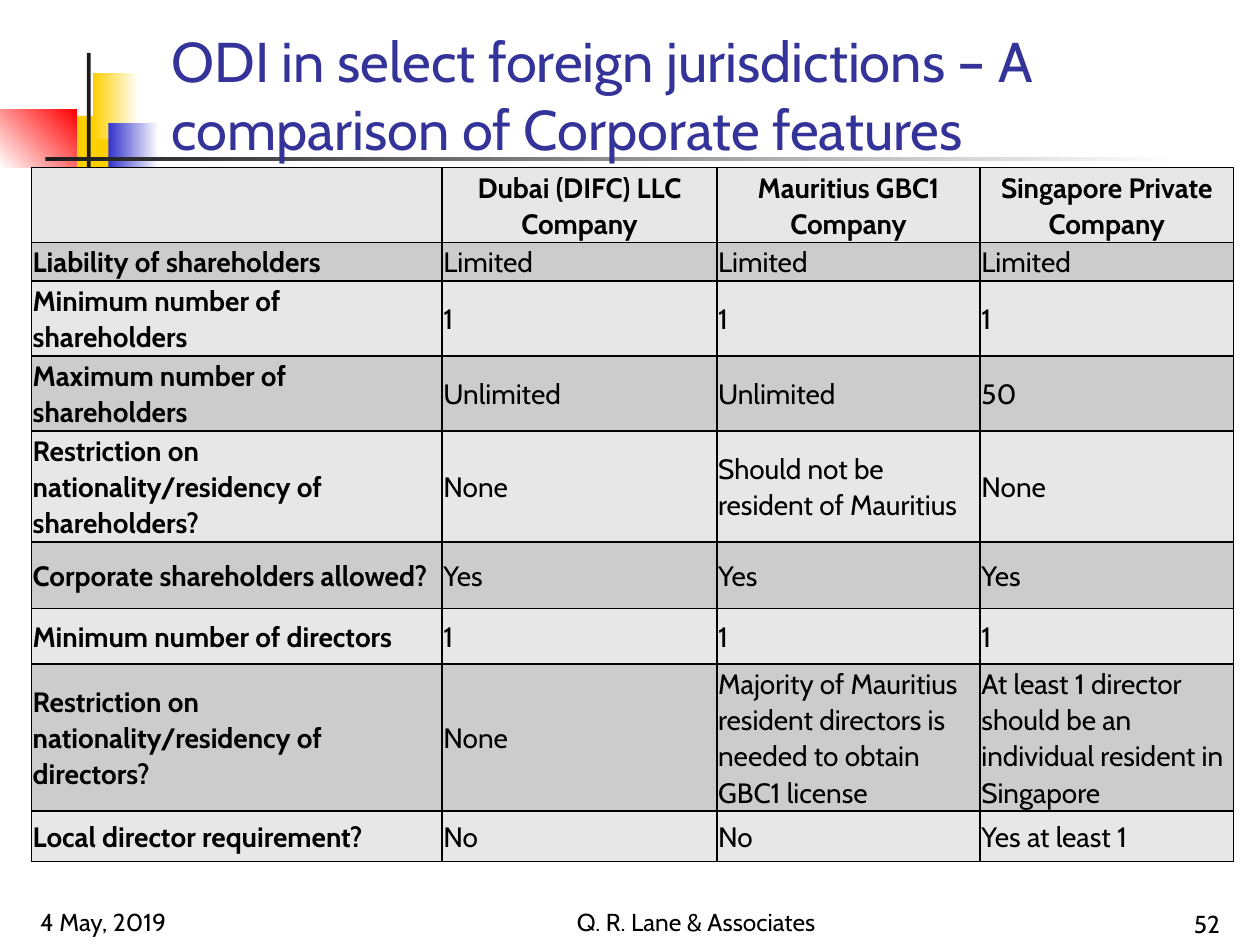
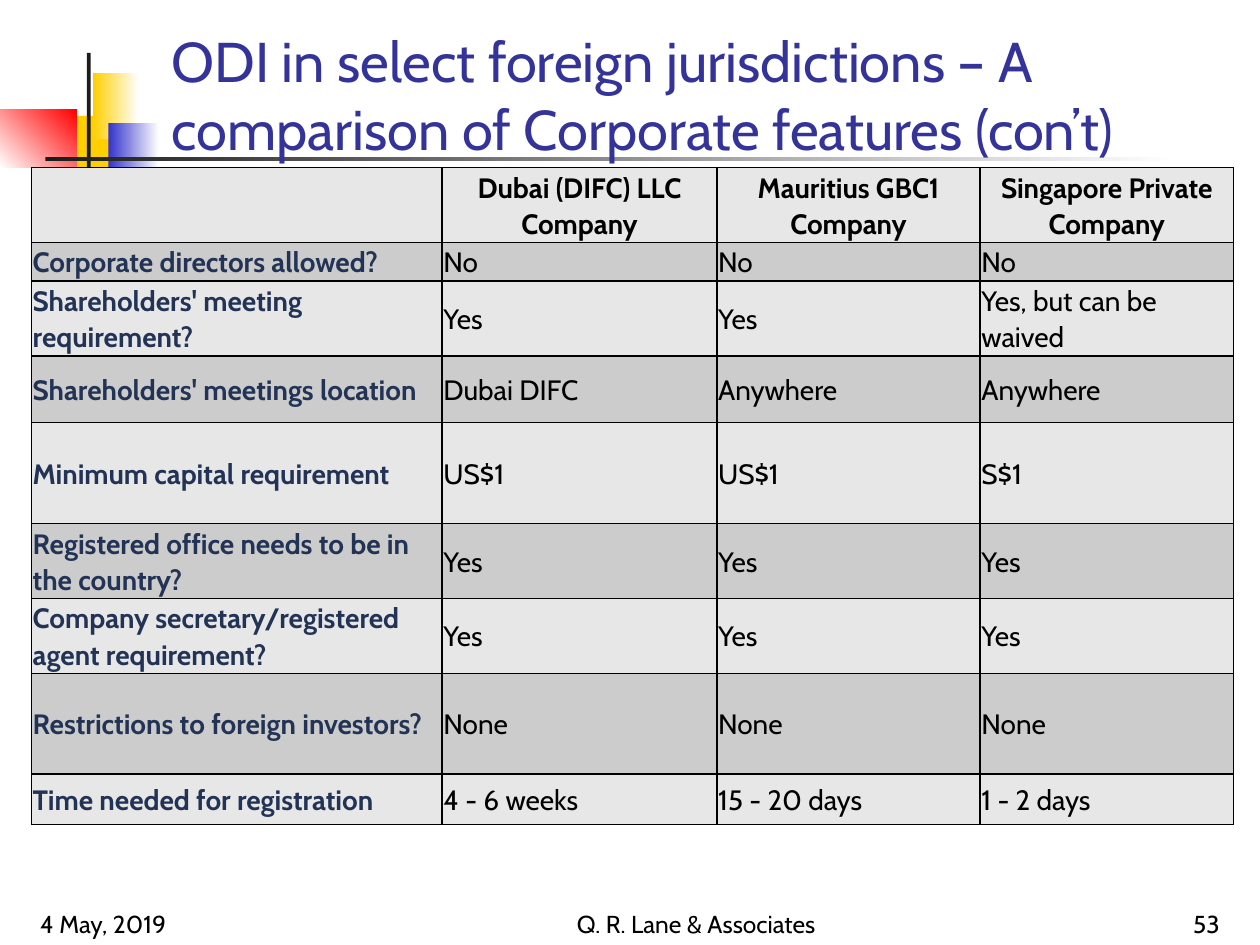
from dataclasses import dataclass

from lxml import etree
from pptx import Presentation
from pptx.dml.color import RGBColor
from pptx.enum import shapes, text
from pptx.oxml import ns
from pptx.util import Inches, Pt

FONT = "Cabin"
BLACK = RGBColor(0x00, 0x00, 0x00)
WHITE = RGBColor(0xFF, 0xFF, 0xFF)
CHARCOAL = RGBColor(0x1C, 0x1C, 0x1C)
GOLD = RGBColor(0xFF, 0xCF, 0x01)
BLUE = RGBColor(0x33, 0x33, 0xCC)
RED = RGBColor(0xFF, 0x00, 0x00)
TITLE_BLUE = RGBColor(0x33, 0x33, 0x99)
LABEL_NAVY = RGBColor(0x22, 0x33, 0x55)
ROW_FILLS = (RGBColor(0xE7, 0xE7, 0xE7), RGBColor(0xCC, 0xCC, 0xCC))

LEFT, CENTER, RIGHT = (text.PP_ALIGN.LEFT, text.PP_ALIGN.CENTER,
                       text.PP_ALIGN.RIGHT)
TITLE = "ODI in select foreign jurisdictions – A comparison of Corporate features"
FIRM = "Q. R. Lane & Associates"
DATE = "4 May, 2019"
HEADER = ("", "Dubai (DIFC) LLC Company", "Mauritius GBC1 Company",
          "Singapore Private Company")
COLUMN_WIDTHS = (3.26, 2.18, 2.09, 2.01)
ROW_HEIGHTS = (0.53, 0.27, 0.53, 0.53, 0.8, 0.53, 0.44, 0.8, 0.4)


@dataclass(frozen=True)
class Block:
    """A rectangle of the title motif; end makes it fade from color to end."""
    left: float
    top: float
    width: float
    height: float
    color: RGBColor
    end: RGBColor | None = None
    angle: int = 0


@dataclass(frozen=True)
class Comparison:
    title: str
    number: str
    label_color: RGBColor
    side_footer_top: float
    rows: tuple[tuple[str, ...], ...]


MOTIF = (
    Block(0.46, 0.92, 0.48, 0.52, GOLD),
    Block(0.59, 1.33, 0.46, 0.52, BLUE),
    Block(0.74, 0.58, 0.36, 0.52, GOLD, WHITE),
    Block(0.86, 0.98, 0.4, 0.52, BLUE, WHITE),
    Block(0, 0.87, 0.61, 0.46, WHITE, RED, 45),
    Block(0.69, 0.42, 0.03, 1.15, CHARCOAL),
    Block(0.36, 1.25, 9, 0.03, CHARCOAL, WHITE),
)

COMPARISONS = (
    Comparison(TITLE, "52", BLACK, 6.98, (
        ("Liability of shareholders", "Limited", "Limited", "Limited"),
        ("Minimum number of shareholders", "1", "1", "1"),
        ("Maximum number of shareholders", "Unlimited", "Unlimited", "50"),
        ("Restriction on nationality/residency of shareholders?", "None",
         "Should not be resident of Mauritius", "None"),
        ("Corporate shareholders allowed?", "Yes", "Yes", "Yes"),
        ("Minimum number of directors", "1", "1", "1"),
        ("Restriction on nationality/residency of directors?", "None",
         "Majority of Mauritius resident directors is needed to obtain GBC1 license",
         "At least 1 director should be an individual resident in Singapore"),
        ("Local director requirement?", "No", "No", "Yes at least 1"),
    )),
    Comparison(f"{TITLE} (con’t)", "53", LABEL_NAVY, 7, (
        ("Corporate directors allowed?", "No", "No", "No"),
        ("Shareholders' meeting requirement?", "Yes", "Yes",
         "Yes, but can be waived"),
        ("Shareholders' meetings location", "Dubai DIFC", "Anywhere", "Anywhere"),
        ("Minimum capital requirement", "US$1", "US$1", "S$1"),
        ("Registered office needs to be in the country?", "Yes", "Yes", "Yes"),
        ("Company secretary/registered agent requirement?", "Yes", "Yes", "Yes"),
        ("Restrictions to foreign investors?", "None", "None", "None"),
        ("Time needed for registration", "4 - 6 weeks", "15 - 20 days",
         "1 - 2 days"),
    )),
)


def write(frame, words: str, *, size: float, color: RGBColor = BLACK,
          bold: bool = False, align=LEFT, spacing: float = 1.0) -> None:
    para = frame.paragraphs[0]
    para.alignment = align
    para.line_spacing = spacing
    span = para.add_run()
    span.text = words
    span.font.name = FONT
    span.font.size = Pt(size)
    span.font.bold = bold
    span.font.color.rgb = color


def draw_block(page, block: Block) -> None:
    box = page.shapes.add_shape(
        shapes.MSO_SHAPE.RECTANGLE, Inches(block.left), Inches(block.top),
        Inches(block.width), Inches(block.height))
    box.shadow.inherit = False
    box.line.fill.background()
    if block.end is None:
        box.fill.solid()
        box.fill.fore_color.rgb = block.color
    else:
        box.fill.gradient()
        box.fill.gradient_angle = block.angle
        for stop, color in zip(box.fill.gradient_stops, (block.color, block.end)):
            stop.color.rgb = color


def place_title(page, words: str) -> None:
    """Format the title placeholder and bring it in front of the motif."""
    title = page.shapes.title
    title.left, title.top = Inches(1.26), Inches(0.23)
    title.width, title.height = Inches(8.52), Inches(1.1)
    frame = title.text_frame
    frame.auto_size = text.MSO_AUTO_SIZE.NONE
    frame.vertical_anchor = text.MSO_ANCHOR.BOTTOM
    write(frame, words, size=32, color=TITLE_BLUE)
    title.element.getparent().append(title.element)


def add_footer(page, words: str, left: float, top: float, width: float, align) -> None:
    box = page.shapes.add_textbox(Inches(left), Inches(top), Inches(width), Inches(0.5))
    frame = box.text_frame
    frame.word_wrap = True
    frame.vertical_anchor = text.MSO_ANCHOR.BOTTOM
    write(frame, words, size=14, align=align)


def add_borders(cell) -> None:
    properties = cell._tc.get_or_add_tcPr()
    for side in ("a:lnL", "a:lnR", "a:lnT", "a:lnB"):
        line = etree.SubElement(properties, ns.qn(side), w=str(Pt(1)))
        fill = etree.SubElement(line, ns.qn("a:solidFill"))
        etree.SubElement(fill, ns.qn("a:srgbClr"), val=str(BLACK))


def add_comparison_table(page, comparison: Comparison) -> None:
    rows = (HEADER, *comparison.rows)
    table = page.shapes.add_table(
        len(rows), len(HEADER), Inches(0.25), Inches(1.33),
        Inches(sum(COLUMN_WIDTHS)), Inches(sum(ROW_HEIGHTS))).table
    for column, width in zip(table.columns, COLUMN_WIDTHS):
        column.width = Inches(width)
    for row, height in zip(table.rows, ROW_HEIGHTS):
        row.height = Inches(height)

    for r, row in enumerate(rows):
        for c, words in enumerate(row):
            cell = table.cell(r, c)
            add_borders(cell)
            cell.fill.solid()
            cell.fill.fore_color.rgb = ROW_FILLS[r % 2]
            if not words:
                continue
            cell.vertical_anchor = text.MSO_ANCHOR.MIDDLE
            cell.margin_left = cell.margin_right = Inches(0.01)
            cell.margin_top = cell.margin_bottom = Inches(0.01)
            write(cell.text_frame, words, size=16, spacing=1.07,
                  bold=r == 0 or c == 0,
                  color=comparison.label_color if c == 0 else BLACK,
                  align=CENTER if r == 0 else LEFT)


def add_page(deck, comparison: Comparison) -> None:
    page = deck.slides.add_slide(deck.slide_layouts.get_by_name("Title Only"))
    for block in MOTIF:
        draw_block(page, block)
    footer_top = comparison.side_footer_top
    add_footer(page, DATE, 0.22, footer_top, 2.08, LEFT)
    add_footer(page, comparison.number, 7.7, 7, 2.08, RIGHT)
    place_title(page, comparison.title)
    add_comparison_table(page, comparison)
    add_footer(page, FIRM, 3.94, footer_top, 3.17, CENTER)


def main() -> None:
    deck = Presentation()
    deck.slide_width, deck.slide_height = Inches(10), Inches(7.5)
    for comparison in COMPARISONS:
        add_page(deck, comparison)
    deck.save("out.pptx")


if __name__ == "__main__":
    main()
